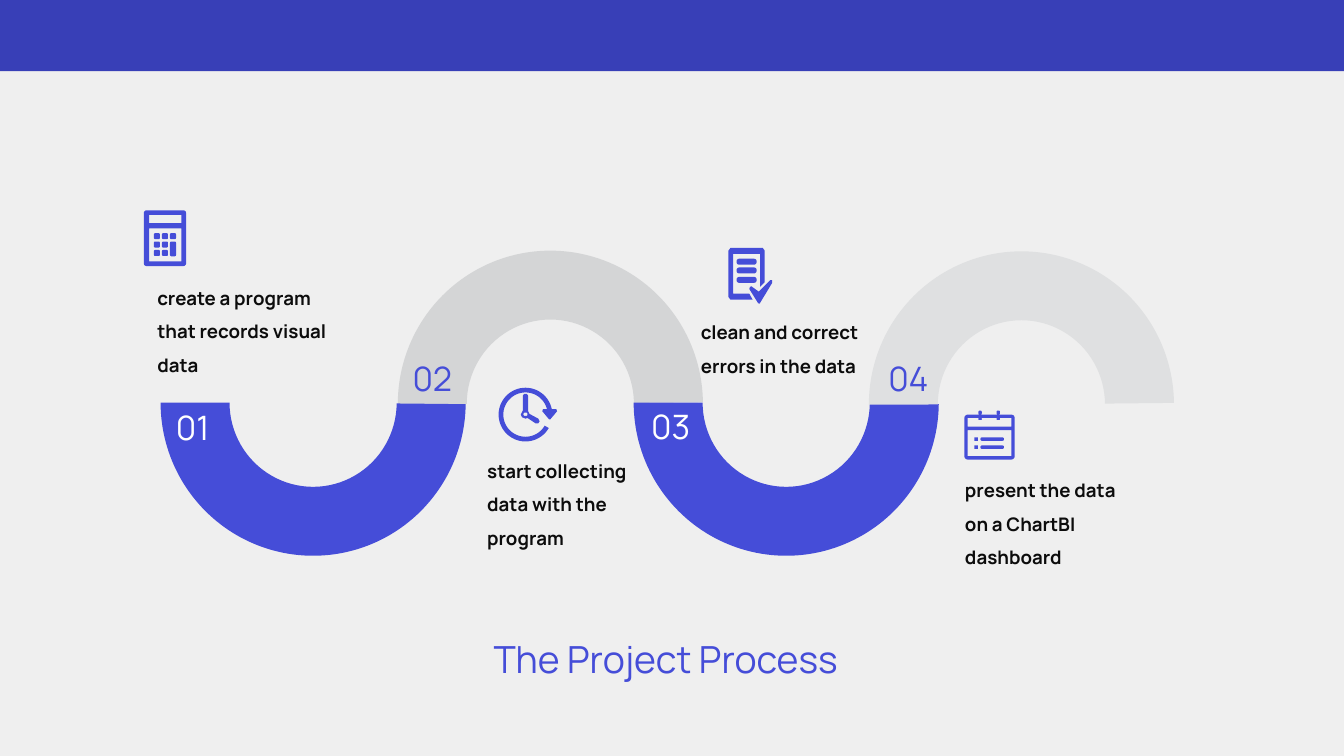
from math import cos, radians, sin

from pptx import Presentation
from pptx.dml.color import RGBColor
from pptx.enum.shapes import MSO_SHAPE
from pptx.enum.text import MSO_ANCHOR, MSO_AUTO_SIZE, PP_ALIGN
from pptx.util import Inches, Pt

COLORS = {
    "background": "EFEFEF",
    "banner": "383FB7",
    "accent": "454DD8",
    "gray": "D4D5D6",
    "light_gray": "DFE0E1",
    "ink": "0C0C0C",
    "white": "FFFFFF",
}


def write_text(shape, text, size, color, bold=False, align=PP_ALIGN.LEFT,
               line_spacing=1.0, inset=(0, 0)):
    frame = shape.text_frame
    frame.word_wrap = True
    frame.auto_size = MSO_AUTO_SIZE.NONE
    frame.vertical_anchor = MSO_ANCHOR.TOP
    frame.margin_left = frame.margin_right = Inches(inset[0])
    frame.margin_top = frame.margin_bottom = Inches(inset[1])
    paragraph = frame.paragraphs[0]
    paragraph.alignment = align
    paragraph.line_spacing = line_spacing
    run = paragraph.add_run()
    run.text = text
    run.font.name = "Manrope"
    run.font.size = Pt(size)
    run.font.bold = bold
    run.font.color.rgb = RGBColor.from_string(COLORS[color])


def add_icon(contours):
    """Draw one outline; a contour is a point list or (left, top, right, bottom, radius).

    A contour inside another one cuts a hole.
    """
    builder = None
    for contour in contours:
        points = contour
        if isinstance(contour, tuple):
            left, top, right, bottom, radius = contour
            corners = [(right - radius, bottom - radius, 0), (left + radius, bottom - radius, 90),
                       (left + radius, top + radius, 180), (right - radius, top + radius, 270)]
            points = [(x + radius * cos(radians(start + turn)), y + radius * sin(radians(start + turn)))
                      for x, y, start in corners for turn in (0, 30, 60, 90)]
        points = [(Inches(x), Inches(y)) for x, y in points]
        if builder is None:
            builder = slide.shapes.build_freeform(*points[0])
        else:
            builder.move_to(*points[0])
        builder.add_line_segments(points[1:], close=True)
    icon = builder.convert_to_shape()
    icon.shadow.inherit = False
    icon.fill.solid()
    icon.fill.fore_color.rgb = RGBColor.from_string(COLORS["accent"])
    icon.line.fill.background()


presentation = Presentation()
presentation.slide_width = Inches(20)
presentation.slide_height = Inches(11.25)
slide = presentation.slides.add_slide(presentation.slide_layouts[5])
slide.background.fill.solid()
slide.background.fill.fore_color.rgb = RGBColor.from_string(COLORS["background"])

# Title
title = slide.shapes.title
title.left, title.top, title.width, title.height = map(Inches, (5.94, 9.47, 7.93, 0.67))
write_text(title, "The Project Process", 40, "accent", align=PP_ALIGN.CENTER)

# Top banner
banner = slide.shapes.add_shape(MSO_SHAPE.RECTANGLE, 0, 0, Inches(20), Inches(1.06))
banner.shadow.inherit = False
banner.fill.solid()
banner.fill.fore_color.rgb = RGBColor.from_string(COLORS["banner"])
banner.line.fill.background()

# Winding road: upper arcs are gray, lower arcs are mirrored top to bottom
for left, top, color, is_lower in [
    (5.92, 3.73, "gray", False),
    (2.39, 3.71, "accent", True),
    (9.43, 3.71, "accent", True),
    (12.93, 3.74, "light_gray", False),
]:
    arc = slide.shapes.add_shape(MSO_SHAPE.BLOCK_ARC, Inches(left), Inches(top), Inches(4.54), Inches(4.56))
    for index, value in enumerate((108, 215.63, 0.226)):
        arc.adjustments[index] = value
    if is_lower:
        arc.rotation = 180
        arc._element.spPr.xfrm.set("flipH", "1")
    arc.shadow.inherit = False
    arc.fill.solid()
    arc.fill.fore_color.rgb = RGBColor.from_string(COLORS[color])
    arc.line.fill.background()

# Step numbers and descriptions
for number, number_place, number_color, description, description_place in [
    ("01", (2.52, 6.01), "white", "create a program that records visual data", (2.34, 4.1, 1.35)),
    ("02", (6.04, 5.27), "accent", "start collecting data with the program", (7.25, 6.67, 1.35)),
    ("03", (9.59, 5.99), "white", "clean and correct errors in the data", (10.43, 4.61, 0.84)),
    ("04", (13.12, 5.27), "accent", "present the data on a ChartBI dashboard", (14.36, 6.96, 1.35)),
]:
    left, top = map(Inches, number_place)
    number_box = slide.shapes.add_textbox(left, top, Inches(0.88), Inches(0.72))
    write_text(number_box, number, 36, number_color, inset=(0.1, 0.05))
    left, top, height = map(Inches, description_place)
    description_box = slide.shapes.add_textbox(left, top, Inches(2.52), height)
    write_text(description_box, description, 20, "ink", bold=True, line_spacing=1.5)

# Calculator icon
calculator = [(2.14, 3.13, 2.77, 3.96, 0.04), (2.22, 3.2, 2.7, 3.32, 0), (2.22, 3.4, 2.7, 3.89, 0)]
for column in range(3):
    for row in range(3):
        if (column, row) == (2, 2):
            continue
        left, top = 2.29 + 0.12 * column, 3.47 + 0.125 * row
        height = 0.22 if (column, row) == (2, 1) else 0.09
        calculator.append((left, top, left + 0.09, top + height, 0.02))
add_icon(calculator)

# Clock icon: open ring with an arrowhead, hands and hub
outer_arc, inner_arc = [
    [(7.82 + radius * cos(radians(angle)), 6.17 + radius * sin(radians(angle))) for angle in range(30, 349, 6)]
    for radius in (0.4, 0.33)
]
arrowhead = [(8.22, 6.09), (8.28, 6.09), (8.29, 6.12), (8.19, 6.24), (8.17, 6.24),
             (8.07, 6.12), (8.08, 6.09), (8.14, 6.09)]
hands = [(7.78, 5.89), (7.8, 5.86), (7.84, 5.86), (7.86, 5.89), (7.86, 6.12), (7.88, 6.16),
         (8.01, 6.23), (8.03, 6.27), (8.01, 6.3), (7.97, 6.3), (7.85, 6.22), (7.82, 6.23),
         (7.77, 6.21), (7.75, 6.17), (7.78, 6.11)]
add_icon([outer_arc + arrowhead + inner_arc[::-1], hands, (7.79, 6.14, 7.85, 6.19, 0.02)])

# Checked document icon
sheet = [(10.91, 4.37), (10.91, 3.78), (11.31, 3.78), (11.31, 4.27), (11.38, 4.2), (11.38, 3.73),
         (11.35, 3.69), (10.87, 3.69), (10.84, 3.73), (10.84, 4.42), (10.87, 4.46), (11.2, 4.46),
         (11.15, 4.37)]
check = [(11.49, 4.17), (11.46, 4.17), (11.29, 4.34), (11.18, 4.26), (11.16, 4.27), (11.15, 4.3),
         (11.28, 4.51), (11.3, 4.52), (11.31, 4.51), (11.49, 4.21)]
text_lines = [(10.96, top, 11.26, top + 0.09, 0.04) for top in (3.85, 3.98, 4.12)]
add_icon([sheet, check] + text_lines)

# Calendar icon
calendar = [(14.35, 6.17, 15.1, 6.84, 0.05), (14.4, 6.22, 15.05, 6.35, 0), (14.4, 6.4, 15.05, 6.79, 0)]
for left in (14.56, 14.83):
    calendar += [(left, 6.11, left + 0.05, 6.17, 0.02), (left, 6.22, left + 0.05, 6.25, 0.01)]
for top in (6.51, 6.63):
    calendar += [(14.5, top, 14.55, top + 0.05, 0), (14.59, top, 14.94, top + 0.05, 0.02)]
add_icon(calendar)

presentation.save("out.pptx")
